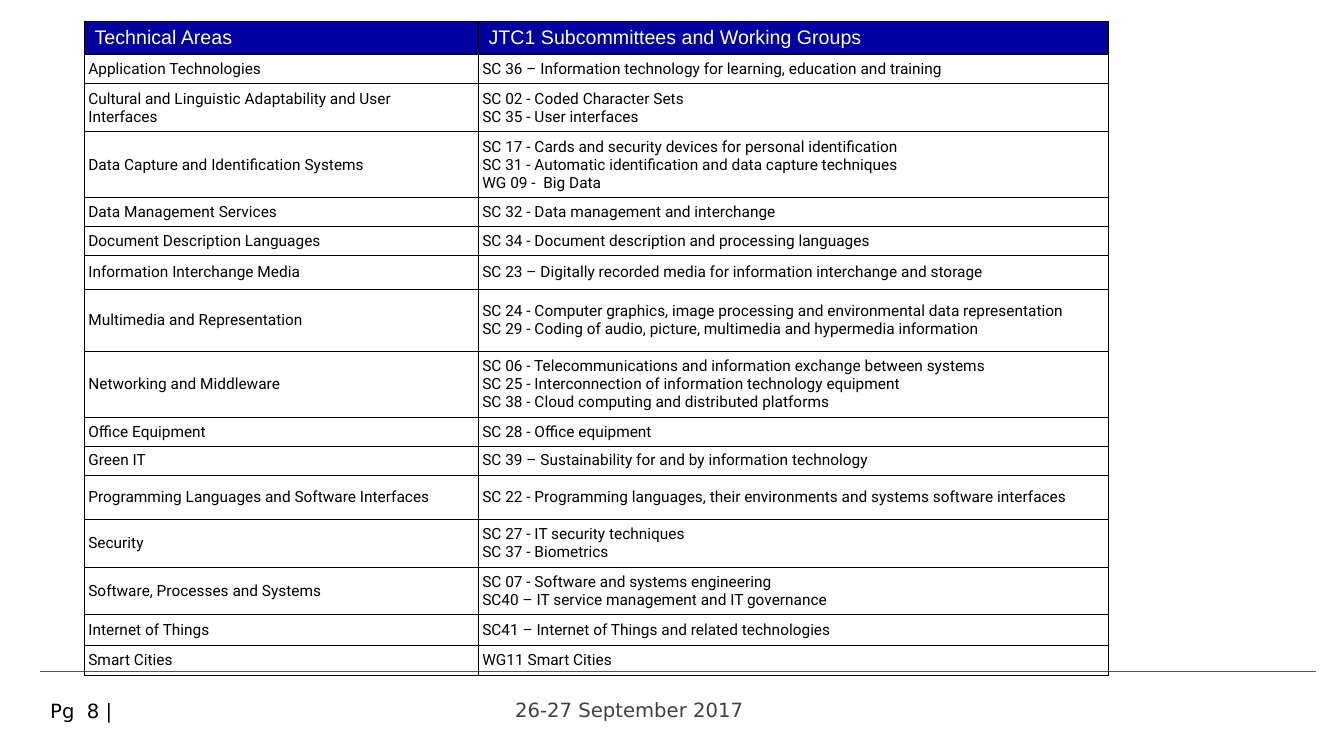
from lxml.etree import SubElement
from pptx import Presentation
from pptx.dml.color import RGBColor
from pptx.enum.shapes import MSO_CONNECTOR
from pptx.enum.text import MSO_ANCHOR
from pptx.oxml.ns import qn
from pptx.util import Pt

BLACK = RGBColor(0x00, 0x00, 0x00)
WHITE = RGBColor(0xFF, 0xFF, 0xFF)
GRAY = RGBColor(0x40, 0x40, 0x40)
NAVY = RGBColor(0x00, 0x00, 0xA0)
BLUE = RGBColor(0x00, 0x6D, 0xA7)

HEADINGS = (23.6, ["Technical Areas"], ["JTC1 Subcommittees and Working Groups"])
AREAS = [
    (20.7, ["Application Technologies"],
     ["SC 36 – Information technology for learning, education and training"]),
    (34.3, ["Cultural and Linguistic Adaptability and User", "Interfaces"],
     ["SC 02 - Coded Character Sets", "SC 35 - User interfaces"]),
    (47.1, ["Data Capture and Identification Systems"],
     ["SC 17 - Cards and security devices for personal identification",
      "SC 31 - Automatic identification and data capture techniques",
      "WG 09 -  Big Data"]),
    (20.7, ["Data Management Services"],
     ["SC 32 - Data management and interchange"]),
    (20.7, ["Document Description Languages"],
     ["SC 34 - Document description and processing languages"]),
    (24.3, ["Information Interchange Media"],
     ["SC 23 – Digitally recorded media for information interchange and storage"]),
    (44.3, ["Multimedia and Representation"],
     ["SC 24 - Computer graphics, image processing and environmental data representation",
      "SC 29 - Coding of audio, picture, multimedia and hypermedia information"]),
    (47.1, ["Networking and Middleware"],
     ["SC 06 - Telecommunications and information exchange between systems",
      "SC 25 - Interconnection of information technology equipment",
      "SC 38 - Cloud computing and distributed platforms"]),
    (20.4, ["Office Equipment"], ["SC 28 - Office equipment"]),
    (20.7, ["Green IT"],
     ["SC 39 – Sustainability for and by information technology"]),
    (31.7, ["Programming Languages and Software Interfaces"],
     ["SC 22 - Programming languages, their environments and systems software interfaces"]),
    (34.3, ["Security"],
     ["SC 27 - IT security techniques", "SC 37 - Biometrics"]),
    (33.8, ["Software, Processes and Systems"],
     ["SC 07 - Software and systems engineering",
      "SC40 – IT service management and IT governance"]),
    (21.8, ["Internet of Things"],
     ["SC41 – Internet of Things and related technologies"]),
    (21.6, ["Smart Cities"], ["WG11 Smart Cities"]),
]


def write_text(text_frame, lines, size, font, color, hanging=0, spacing=None):
    for index, line in enumerate(lines):
        paragraph = text_frame.add_paragraph() if index else text_frame.paragraphs[0]
        if hanging:
            properties = paragraph._p.get_or_add_pPr()
            properties.set("marL", str(Pt(hanging)))
            properties.set("indent", str(-Pt(hanging)))
        if spacing:
            paragraph.line_spacing = spacing
        run = paragraph.add_run()
        run.text = line
        run.font.size = Pt(size)
        run.font.name = font
        run.font.color.rgb = color


def draw_borders(cell, color, width):
    properties = cell._tc.get_or_add_tcPr()
    for side in ("a:lnL", "a:lnR", "a:lnT", "a:lnB"):
        border = SubElement(properties, qn(side), w=str(Pt(width)))
        fill = SubElement(border, qn("a:solidFill"))
        SubElement(fill, qn("a:srgbClr"), val=str(color))


def fill_cell(cell, lines, is_heading):
    cell.vertical_anchor = MSO_ANCHOR.MIDDLE
    cell.margin_left = cell.margin_right = Pt(7.2 if is_heading else 2.7)
    cell.margin_top = cell.margin_bottom = Pt(3.6)
    draw_borders(cell, BLACK, 1)
    if is_heading:
        cell.fill.solid()
        cell.fill.fore_color.rgb = NAVY
        write_text(cell.text_frame, lines, size=14, font="Arial", color=WHITE, hanging=27)
    else:
        cell.fill.background()
        write_text(cell.text_frame, lines, size=11, font="Roboto", color=BLACK, hanging=27)


def add_areas_table(slide, left, top, width):
    rows = [HEADINGS, *AREAS]
    height = sum(row[0] for row in rows)
    table = slide.shapes.add_table(
        len(rows), 2, Pt(left), Pt(top), Pt(width), Pt(height)).table
    table.first_row = table.horz_banding = False
    area_width = 281.4
    table.columns[0].width = Pt(area_width)
    table.columns[1].width = Pt(width - area_width)
    for index, (row_height, *columns) in enumerate(rows):
        table.rows[index].height = Pt(row_height)
        for column, lines in enumerate(columns):
            fill_cell(table.cell(index, column), lines, is_heading=index == 0)


def add_label(slide, text, left, top, width, height, **text_format):
    box = slide.shapes.add_textbox(Pt(left), Pt(top), Pt(width), Pt(height))
    box.text_frame.word_wrap = True
    write_text(box.text_frame, [text], size=14, font="DejaVu Sans", **text_format)


def add_footer(slide, left, top, width):
    rule = slide.shapes.add_connector(
        MSO_CONNECTOR.STRAIGHT, Pt(left), Pt(top), Pt(left + width), Pt(top))
    rule.line.color.rgb = BLUE
    rule.line.width = Pt(0.75)
    SubElement(rule._element.spPr, qn("a:effectLst"))
    add_label(slide, "26-27 September 2017", left + 332, top + 15.8, 278, 24.5, color=GRAY)
    add_label(slide, "Pg  8 |", left, top + 18, 199, 28, color=BLACK, spacing=0.93)


def main():
    presentation = Presentation()
    presentation.slide_width = Pt(960)
    presentation.slide_height = Pt(540)
    slide = presentation.slides.add_slide(presentation.slide_layouts[6])
    add_footer(slide, left=28.8, top=479.5, width=911.5)
    add_areas_table(slide, left=60.4, top=15.1, width=731.4)
    presentation.save("out.pptx")


if __name__ == "__main__":
    main()
